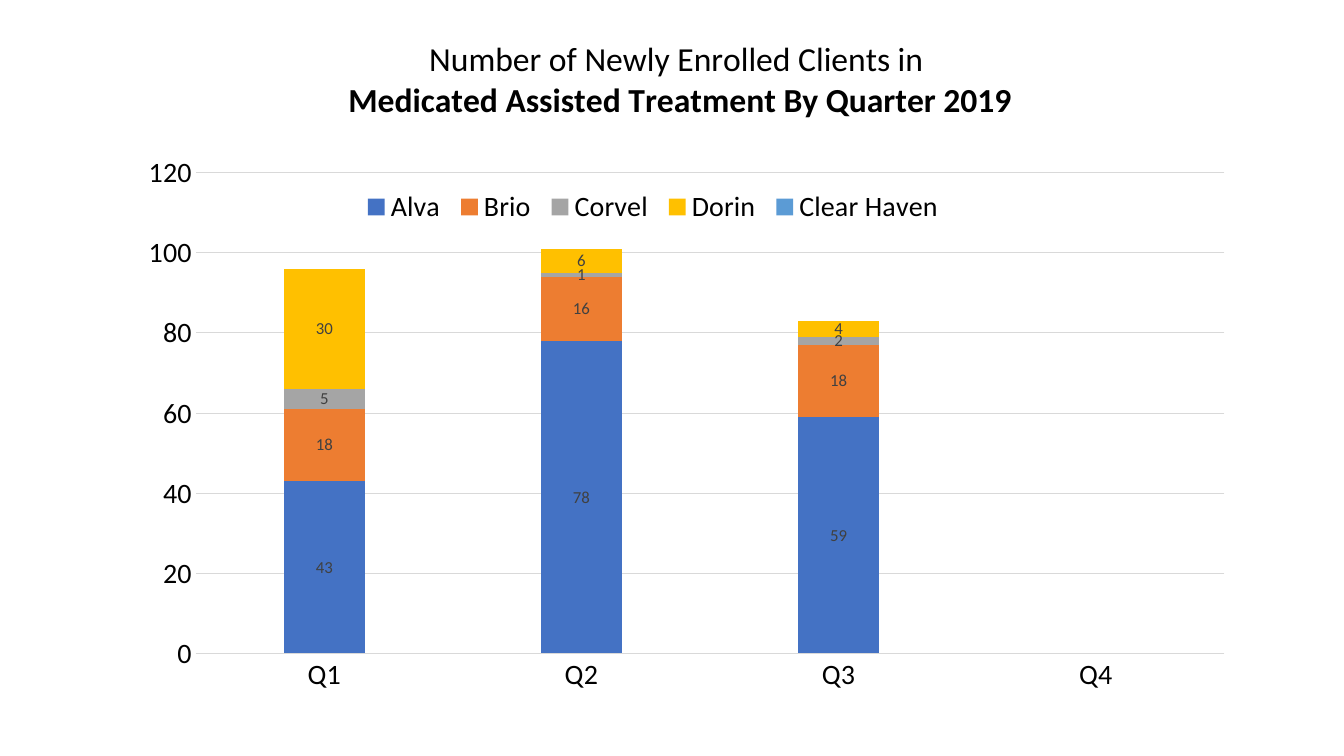
from lxml import etree
from pptx import Presentation
from pptx.chart.data import CategoryChartData
from pptx.dml.color import RGBColor
from pptx.enum.chart import XL_CHART_TYPE as ChartType, XL_LABEL_POSITION as LabelPos
from pptx.enum.chart import XL_LEGEND_POSITION as LegendPos, XL_TICK_MARK as Tick
from pptx.oxml.ns import qn
from pptx.util import Cm, Pt

TITLE = [("Number of Newly Enrolled Clients in ", False),
         ("Medicated Assisted Treatment By Quarter 2019", True)]
QUARTERS = ["Q1", "Q2", "Q3", "Q4"]
PROVIDERS = {
    "Alva": [43, 78, 59, None],
    "Brio": [18, 16, 18, None],
    "Corvel": [5, 1, 2, None],
    "Dorin": [30, 6, 4, None],
    "Clear Haven": [None] * 4,
}
COLORS = {
    "Alva": "4472C4", "Brio": "ED7D31", "Corvel": "A5A5A5", "Dorin": "FFC000",
    "Clear Haven": "5B9BD5", "text": "000000", "label": "404040", "grid": "D9D9D9",
}
FONT = "Calibri"


def rgb(name):
    return RGBColor.from_string(COLORS[name])


def style_font(font, size, color="text", bold=False):
    font.name, font.size, font.bold = FONT, Pt(size), bold
    font.color.rgb = rgb(color)


def style_line(line):
    line.color.rgb = rgb("grid")
    line.width = Pt(0.75)


def make_layout(inner=False, **place):
    layout = etree.Element(qn("c:layout"))
    manual = etree.SubElement(layout, qn("c:manualLayout"))
    settings = [("layoutTarget", "inner")] if inner else []
    settings += [("xMode", "edge"), ("yMode", "edge"), *place.items()]
    for tag, value in settings:
        etree.SubElement(manual, qn("c:" + tag)).set("val", str(value))
    return layout


def place_after(parent, tag, layout):
    for old in parent.findall(qn("c:layout")):
        parent.remove(old)
    parent.find(qn(tag)).addnext(layout)


prs = Presentation()
prs.slide_width, prs.slide_height = Cm(33.87), Cm(19.05)
s = prs.slides.add_slide(prs.slide_layouts[6])

data = CategoryChartData()
data.categories = QUARTERS
for provider, clients in PROVIDERS.items():
    data.add_series(provider, clients)
chart = s.shapes.add_chart(ChartType.COLUMN_STACKED, Cm(3.16), Cm(0.89),
                           Cm(27.71), Cm(16.97), data).chart
style_font(chart.font, 10)

chart.has_title = True
tf = chart.chart_title.text_frame
for i, (line, bold) in enumerate(TITLE):
    p = tf.add_paragraph() if i else tf.paragraphs[0]
    r = p.add_run()
    r.text = line
    style_font(r.font, 24, bold=bold)
chart.chart_title.include_in_layout = False
place_after(chart.chart_title._element, "c:tx", make_layout(x=0.2, y=0))

chart.has_legend = True
chart.legend.position = LegendPos.BOTTOM
chart.legend.include_in_layout = False
style_font(chart.legend.font, 20)
place_after(chart.legend._element, "c:legendPos",
            make_layout(x=0.21, y=0.22, w=0.54, h=0.07))

for axis in (chart.category_axis, chart.value_axis):
    axis.major_tick_mark = axis.minor_tick_mark = Tick.NONE
    style_font(axis.tick_labels.font, 20)
style_line(chart.category_axis.format.line)
values = chart.value_axis
values.minimum_scale, values.maximum_scale, values.major_unit = 0, 120, 20
values.format.line.fill.background()
values.has_major_gridlines = True
style_line(values.major_gridlines.format.line)

plot = chart.plots[0]
plot.gap_width, plot.overlap, plot.vary_by_categories = 219, 100, False
for series in plot.series:
    series.format.fill.solid()
    series.format.fill.fore_color.rgb = rgb(series.name)
    if any(series.values):
        labels = series.data_labels
        labels.show_value = True
        labels.position = LabelPos.CENTER
        style_font(labels.font, 12, "label")

area = chart._chartSpace.chart.plotArea
for old in area.findall(qn("c:layout")):
    area.remove(old)
area.insert(0, make_layout(True, x=0.064, y=0.204, w=0.936, h=0.714))

prs.save("out.pptx")
